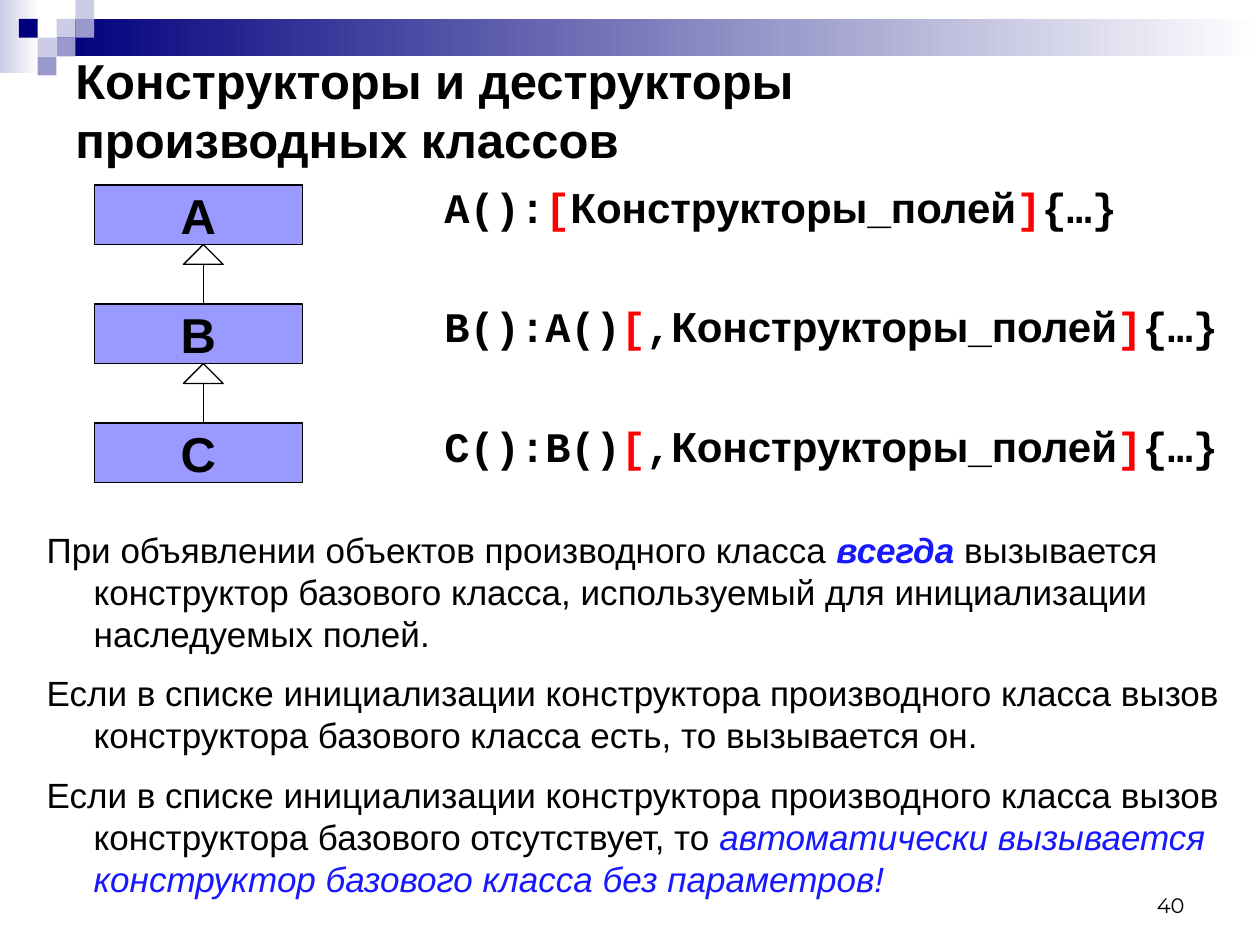
"""Build the slide on constructors and destructors of derived classes."""
import pptx
import pptx.dml.color
import pptx.enum.shapes
import pptx.enum.text
import pptx.util
import lxml.etree

Cm, Pt = pptx.util.Cm, pptx.util.Pt
SHAPE = pptx.enum.shapes.MSO_SHAPE
ALIGN = pptx.enum.text.PP_ALIGN
ANCHOR = pptx.enum.text.MSO_ANCHOR
DRAW = "http://schemas.openxmlformats.org/drawingml/2006/main"


def tint(code):
    return pptx.dml.color.RGBColor.from_string(code)


def write(shape, paras, size=20, font="Arial", color="000000", bold=False,
          align=ALIGN.LEFT, anchor=ANCHOR.TOP, wrap=True, gap=0, hang=0):
    frame = shape.text_frame
    frame.word_wrap = wrap
    frame.vertical_anchor = anchor
    for row, parts in enumerate(paras):
        para = frame.add_paragraph() if row else frame.paragraphs[0]
        para.alignment = align
        para.space_before = Pt(gap if row else 0)
        if hang:
            props = para._p.get_or_add_pPr()
            props.set("marL", str(Cm(hang)))
            props.set("indent", str(-Cm(hang)))
        for text, look in parts:
            if text == "\n":
                para.add_line_break()
                continue
            run = para.add_run()
            run.text = text
            run.font.size = Pt(size)
            run.font.name = look.get("font", font)
            run.font.bold = look.get("bold", bold)
            run.font.italic = look.get("italic", False)
            run.font.color.rgb = tint(look.get("color", color))


deck = pptx.Presentation()
deck.slide_width, deck.slide_height = Cm(25.4), Cm(19.05)
slide = deck.slides.add_slide(deck.slide_layouts[6])
shapes = slide.shapes

for left, top, width, height, start in [(0, 0, 0.79, 1.47, "CCCCE6"),
                                        (1.14, 0.38, 24.26, 0.76, "00007D")]:
    band = shapes.add_shape(SHAPE.RECTANGLE, Cm(left), Cm(top), Cm(width), Cm(height))
    band.shadow.inherit = False
    band.line.fill.background()
    band.fill.gradient()
    band.fill.gradient_angle = 0
    for stop, code in zip(band.fill.gradient_stops, (start, "FFFFFF")):
        stop.color.rgb = tint(code)

side = 0.38
for col, row, code in [(3, 1, "CCCCE6"), (4, 0, "CCCCE6"), (4, 1, "9999CC"),
                       (2, 2, "CCCCE6"), (1, 1, "00007D"), (3, 2, "9999CC"),
                       (2, 3, "9999CC")]:
    tile = shapes.add_shape(SHAPE.RECTANGLE, Cm(col * side), Cm(row * side),
                            Cm(side), Cm(side))
    tile.shadow.inherit = False
    tile.line.fill.background()
    tile.fill.solid()
    tile.fill.fore_color.rgb = tint(code)

page = shapes.add_textbox(Cm(18.2), Cm(17.35), Cm(5.93), Cm(1.27))
write(page, [[("40", {})]], size=12, font="Montserrat", align=ALIGN.RIGHT,
      anchor=ANCHOR.BOTTOM)

title = shapes.add_textbox(Cm(1.27), Cm(0.91), Cm(22.86), Cm(2.6))
write(title, [[("Конструкторы и деструкторы", {}), ("\n", {}),
               ("производных классов", {})]],
      size=28, bold=True, anchor=ANCHOR.MIDDLE)

red = {"color": "FF0000"}
lines = []
for head, comma in [("A():", ""), ("B():A()", ","), ("C():B()", ",")]:
    parts = [(head, {}), ("[", red), (comma, {}),
             ("Конструкторы_полей", {"font": "Arial"}), ("]", red), ("{…}", {})]
    lines.append([part for part in parts if part[0]])
code = shapes.add_textbox(Cm(8.71), Cm(3.53), Cm(16.69), Cm(7.01))
write(code, lines, size=24, font="Courier New", bold=True, gap=39.5)

first, step, tall, mid = 3.73, 2.4, 1.2, 4.1
for row, name in enumerate("ABC"):
    top = first + row * step
    box = shapes.add_shape(SHAPE.RECTANGLE, Cm(1.9), Cm(top), Cm(4.2), Cm(tall))
    box.shadow.inherit = False
    box.fill.solid()
    box.fill.fore_color.rgb = tint("9999FF")
    box.line.color.rgb = tint("000000")
    box.line.width = Pt(0.75)
    write(box, [[(name, {})]], size=28, bold=True, align=ALIGN.CENTER,
          anchor=ANCHOR.MIDDLE, wrap=False)

for row in range(2):
    tip = first + row * step + tall
    arrow = shapes.add_shape(SHAPE.ISOSCELES_TRIANGLE, Cm(mid - 0.4), Cm(tip),
                             Cm(0.8), Cm(0.4))
    arrow.shadow.inherit = False
    arrow.fill.background()
    stem = shapes.add_connector(pptx.enum.shapes.MSO_CONNECTOR.STRAIGHT, Cm(mid),
                                Cm(first + (row + 1) * step), Cm(mid), Cm(tip + 0.4))
    props = stem._element.spPr
    for part in (arrow, stem):
        part.line.color.rgb = tint("000000")
        part.line.width = Pt(0.75)
    lxml.etree.SubElement(props, f"{{{DRAW}}}effectLst")

blue = {"color": "1818FF", "italic": True}
notes = [
    [("При объявлении объектов производного класса ", {}),
     ("всегда", {**blue, "bold": True}),
     (" вызывается конструктор базового класса, используемый для "
      "инициализации наследуемых полей.", {})],
    [("Если в списке инициализации конструктора производного класса вызов "
      "конструктора базового класса есть, то вызывается он.", {})],
    [("Если в списке инициализации конструктора производного класса вызов "
      "конструктора базового отсутствует, то ", {}),
     ("автоматически вызывается конструктор базового класса без параметров!", blue)],
]
body = shapes.add_textbox(Cm(0.69), Cm(10.52), Cm(24.41), Cm(7.95))
write(body, notes, gap=10, hang=0.95)

deck.save("out.pptx")
